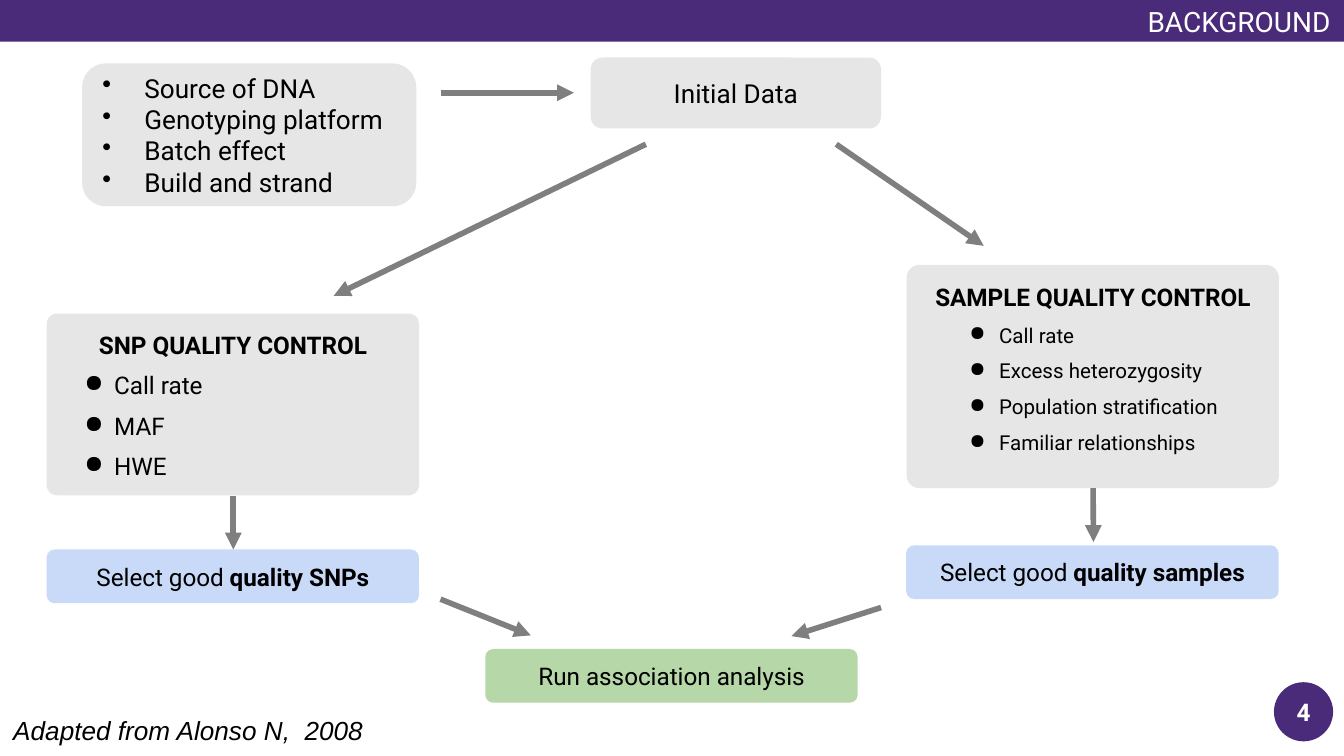
from lxml.etree import SubElement
from pptx import Presentation
from pptx.dml.color import RGBColor
from pptx.enum.shapes import MSO_CONNECTOR as Connector, MSO_SHAPE as Shape
from pptx.enum.text import MSO_ANCHOR as Anchor, MSO_AUTO_SIZE as AutoSize, PP_ALIGN as Align
from pptx.oxml.ns import qn
from pptx.util import Pt

PURPLE, GRAY, BLUE, GREEN = "4A2B79", "E7E6E6", "C9DAF8", "B6D7A8"
ARROW, BLACK, WHITE = "7F7F7F", "000000", "FFFFFF"


def color(value):
    return RGBColor.from_string(value)


class FlowSlide:
    font = "Roboto"

    def __init__(self, presentation):
        self.slide = presentation.slides.add_slide(presentation.slide_layouts[5])

    def frame(self, shape, anchor, side=7.2, edge=7.2):
        frame = shape.text_frame
        frame.word_wrap = True
        frame.auto_size = AutoSize.NONE
        frame.vertical_anchor = anchor
        frame.margin_left = frame.margin_right = Pt(side)
        frame.margin_top = frame.margin_bottom = Pt(edge)
        return frame

    def run(self, paragraph, text, size, bold=False, italic=False, ink=BLACK, font=None):
        run = paragraph.add_run()
        run.text = text
        run.font.name = font or self.font
        run.font.size = Pt(size)
        run.font.bold = bold
        run.font.italic = italic
        run.font.color.rgb = color(ink)

    def title(self, text, width, height):
        shape = self.slide.shapes.title
        shape.left, shape.top, shape.width, shape.height = Pt(0), Pt(0), Pt(width), Pt(height)
        shape.fill.solid()
        shape.fill.fore_color.rgb = color(PURPLE)
        paragraph = self.frame(shape, Anchor.MIDDLE, edge=3.6).paragraphs[0]
        paragraph.alignment = Align.RIGHT
        self.run(paragraph, text, 15, ink=WHITE)

    def shape(self, kind, left, top, width, height, fill):
        shape = self.slide.shapes.add_shape(kind, Pt(left), Pt(top), Pt(width), Pt(height))
        shape.shadow.inherit = False
        shape.fill.solid()
        shape.fill.fore_color.rgb = color(fill)
        shape.line.fill.background()
        return shape

    def box(self, left, top, width, height, fill, radius, anchor=Anchor.MIDDLE):
        shape = self.shape(Shape.ROUNDED_RECTANGLE, left, top, width, height, fill)
        shape.adjustments[0] = radius
        return self.frame(shape, anchor)

    def label(self, frame, size, text, bold_text="", all_bold=False):
        paragraph = frame.paragraphs[0]
        paragraph.alignment = Align.CENTER
        self.run(paragraph, text, size, bold=all_bold)
        if bold_text:
            self.run(paragraph, bold_text, size, bold=True)

    def bullet(self, paragraph, text, size, mark, margin, hanging, gap=0):
        paragraph.alignment = Align.LEFT
        paragraph.space_before = Pt(gap)
        properties = paragraph._p.get_or_add_pPr()
        properties.set("marL", str(Pt(margin)))
        properties.set("indent", str(-Pt(hanging)))
        bullet_color = SubElement(properties, qn("a:buClr"))
        SubElement(bullet_color, qn("a:srgbClr"), val=BLACK)
        SubElement(properties, qn("a:buChar"), char=mark)
        self.run(paragraph, text, size)

    def source_box(self, items):
        frame = self.box(44, 34, 179, 76.5, GRAY, 0.167)
        for index, item in enumerate(items):
            paragraph = frame.add_paragraph() if index else frame.paragraphs[0]
            self.bullet(paragraph, item, 14, "•", 22.5, 22.5)

    def control_box(self, left, top, height, heading, items, size, margin):
        frame = self.box(left, top, 199.5, height, GRAY, 0.057, Anchor.TOP)
        self.label(frame, 13, heading, all_bold=True)
        for item in items:
            self.bullet(frame.add_paragraph(), item, size, "●", margin, 16, gap=6)

    def step_box(self, left, top, fill, text, bold_text=""):
        self.label(self.box(left, top, 199.5, 28.8, fill, 0.149), 13, text, bold_text)

    def arrow(self, *ends):
        connector = self.slide.shapes.add_connector(Connector.STRAIGHT, *map(Pt, ends))
        connector.line.color.rgb = color(ARROW)
        connector.line.width = Pt(3)
        SubElement(connector.line._get_or_add_ln(), qn("a:tailEnd"), type="triangle")
        SubElement(connector._element.spPr, qn("a:effectLst"))

    def citation(self, text):
        shape = self.slide.shapes.add_textbox(Pt(0), Pt(379), Pt(203), Pt(18))
        paragraph = self.frame(shape, Anchor.TOP, edge=3.6).paragraphs[0]
        self.run(paragraph, text, 14, italic=True, font="Arial")

    def page_badge(self, number):
        shape = self.shape(Shape.OVAL, 682.5, 365.5, 31.7, 31.7, PURPLE)
        paragraph = self.frame(shape, Anchor.MIDDLE, side=0, edge=0).paragraphs[0]
        paragraph.alignment = Align.CENTER
        self.run(paragraph, number, 13, bold=True, ink=WHITE)


def main():
    presentation = Presentation()
    presentation.slide_width, presentation.slide_height = Pt(720), Pt(405)
    flow = FlowSlide(presentation)

    flow.title("BACKGROUND", 720, 22.3)
    flow.source_box(["Source of DNA", "Genotyping platform", "Batch effect", "Build and strand"])
    flow.label(flow.box(316.5, 30.8, 155.5, 38, GRAY, 0.167), 14, "Initial Data")

    flow.control_box(25, 168, 97.3, "SNP QUALITY CONTROL", ["Call rate", "MAF", "HWE"], 13, 27.5)
    flow.control_box(
        485.7, 142, 119.5, "SAMPLE QUALITY CONTROL",
        ["Call rate", "Excess heterozygosity", "Population stratification", "Familiar relationships"],
        11, 40.5)

    flow.step_box(25, 294.4, BLUE, "Select good ", "quality SNPs")
    flow.step_box(485.5, 292.2, BLUE, "Select good ", "quality samples")
    flow.step_box(260, 347.7, GREEN, "Run association analysis")

    for ends in [
        (236, 49.7, 307.5, 49.7),
        (346, 77.3, 178.8, 158.5),
        (448, 77.3, 527, 131.7),
        (125, 265.5, 125, 294.4),
        (585.6, 261.5, 585.8, 290.4),
        (236, 321, 284.4, 340.4),
        (472, 325.5, 424, 340.8),
    ]:
        flow.arrow(*ends)

    flow.citation("Adapted from Alonso N,  2008")
    flow.page_badge("4")
    presentation.save("out.pptx")


if __name__ == "__main__":
    main()
